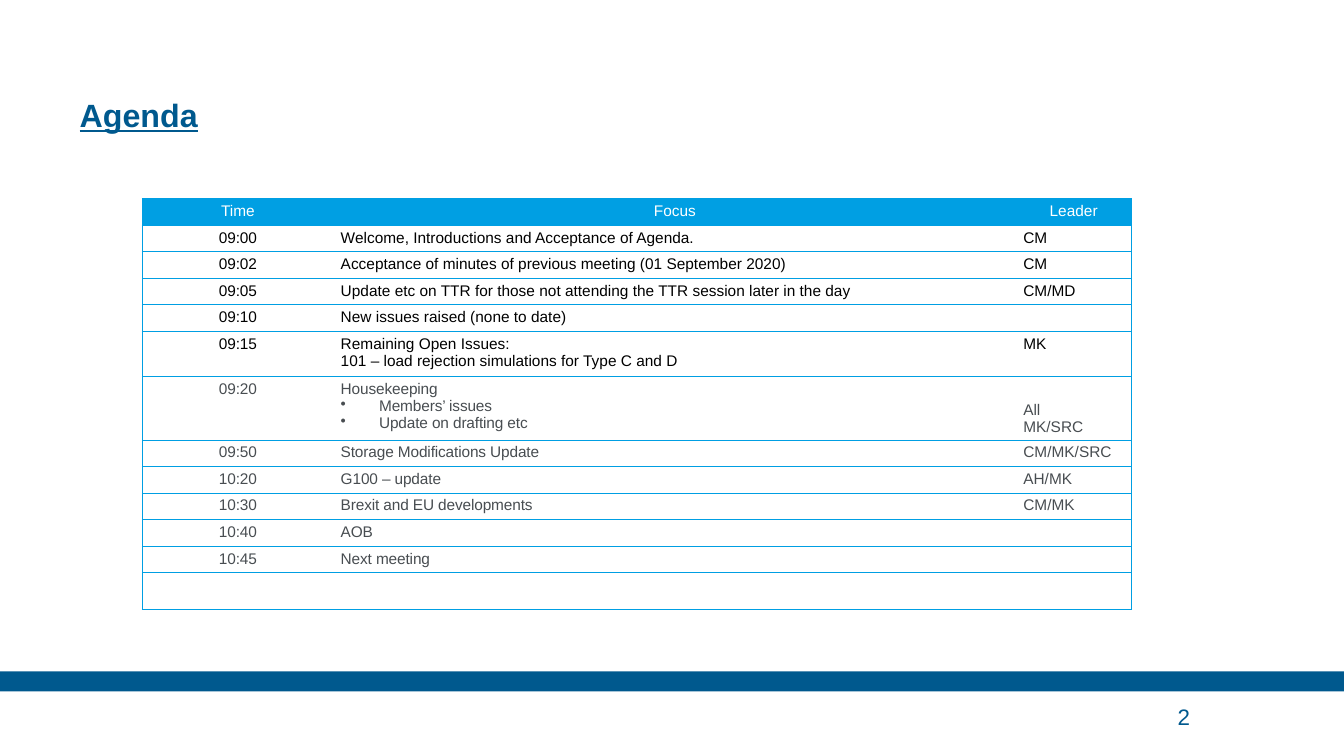
from lxml import etree
from pptx import Presentation
from pptx.dml.color import RGBColor
from pptx.enum.shapes import MSO_SHAPE
from pptx.enum.text import MSO_ANCHOR, PP_ALIGN
from pptx.oxml.ns import qn
from pptx.util import Inches, Pt

LEFT, CENTER = PP_ALIGN.LEFT, PP_ALIGN.CENTER
TOP, MIDDLE, BOTTOM = MSO_ANCHOR.TOP, MSO_ANCHOR.MIDDLE, MSO_ANCHOR.BOTTOM
NAVY, SKY, WHITE, BLACK, GREY = "00598E", "009FE3", "FFFFFF", "000000", "484D51"
FONT = "Arial"
BULLET = "•"

# Content: time, focus lines, leader lines
HEADER = ("Time", ["Focus"], ["Leader"])
MEETING_ITEMS = [
    ("09:00", ["Welcome, Introductions and Acceptance of Agenda."], ["CM"]),
    ("09:02", ["Acceptance of minutes of previous meeting (01 September 2020)"], ["CM"]),
    ("09:05", ["Update etc on TTR for those not attending the TTR session later in the day"],
     ["CM/MD"]),
    ("09:10", ["New issues raised (none to date)"], []),
    ("09:15", ["Remaining Open Issues:", "101 – load rejection simulations for Type C and D"],
     ["MK"]),
]
UPDATE_ITEMS = [
    ("09:20", ["Housekeeping", BULLET + "Members’ issues", BULLET + "Update on drafting etc"],
     ["All", "MK/SRC"]),
    ("09:50", ["Storage Modifications Update"], ["CM/MK/SRC"]),
    ("10:20", ["G100 – update"], ["AH/MK"]),
    ("10:30", ["Brexit and EU developments"], ["CM/MK"]),
    ("10:40", ["AOB"], []),
    ("10:45", ["Next meeting"], []),
    ("", [], []),
]
COLUMN_WIDTHS = [1.9, 6.77, 1.14]
LINE_HEIGHT, ROW_PADDING, LAST_ROW_HEIGHT = 0.17, 0.08, 0.36


def color(hex_code):
    return RGBColor.from_string(hex_code)


def write(frame, lines, size=11, ink=BLACK, align=LEFT, bold=False, underline=False,
          tracking=0, line_spacing=None):
    """Fill a text frame, one paragraph a line; a leading bullet makes a list item."""
    for index, line in enumerate(lines):
        para = frame.paragraphs[0] if index == 0 else frame.add_paragraph()
        para.alignment = align
        if line_spacing:
            para.line_spacing = Pt(line_spacing)
        if line.startswith(BULLET):
            properties = para._p.get_or_add_pPr()
            properties.set("marL", str(Inches(0.38)))
            properties.set("indent", str(-Inches(0.38)))
            etree.SubElement(properties, qn("a:buChar"), char=BULLET)
        span = para.add_run()
        span.text = line.removeprefix(BULLET)
        span.font.name, span.font.size = FONT, Pt(size)
        span.font.bold, span.font.underline = bold, underline
        span.font.color.rgb = color(ink)
        if tracking:
            span._r.get_or_add_rPr().set("spc", str(round(tracking * 100)))
    if not lines:
        # An empty cell keeps the text size, so its row does not grow
        etree.SubElement(frame.paragraphs[0]._p, qn("a:endParaRPr"), sz=str(size * 100))


def add_text(page, place, text, anchor, **style):
    frame = page.shapes.add_textbox(*map(Inches, place)).text_frame
    frame.word_wrap = True
    frame.vertical_anchor = anchor
    frame.margin_left = frame.margin_right = frame.margin_top = frame.margin_bottom = 0
    write(frame, [text], **style)


def set_borders(cell, visible):
    """Draw the named sides of a cell and clear the others."""
    properties = cell._tc.get_or_add_tcPr()
    for index, side in enumerate("LRTB"):
        line = etree.Element(qn(f"a:ln{side}"), w=str(Pt(0.5)))
        if side in visible:
            fill = etree.SubElement(line, qn("a:solidFill"))
            etree.SubElement(fill, qn("a:srgbClr"), val=SKY)
        else:
            etree.SubElement(line, qn("a:noFill"))
        properties.insert(index, line)


def fill_cell(cell, lines, background, sides, anchor, **style):
    cell.margin_left = cell.margin_right = Inches(0.07)
    cell.margin_top = cell.margin_bottom = Inches(0.04)
    cell.vertical_anchor = anchor
    cell.fill.solid()
    cell.fill.fore_color.rgb = color(background)
    set_borders(cell, sides)
    write(cell.text_frame, lines, **style)


def add_agenda(page):
    rows = [(HEADER, WHITE)]
    rows += [(item, BLACK) for item in MEETING_ITEMS]
    rows += [(item, GREY) for item in UPDATE_ITEMS]
    heights = [LINE_HEIGHT * max(1, len(focus)) + ROW_PADDING for (_, focus, _), _ in rows]
    heights[-1] = LAST_ROW_HEIGHT

    table = page.shapes.add_table(
        len(rows), len(COLUMN_WIDTHS), Inches(1.41), Inches(1.97),
        Inches(sum(COLUMN_WIDTHS)), Inches(sum(heights))).table
    table.first_row = table.horz_banding = False
    for column, width in zip(table.columns, COLUMN_WIDTHS):
        column.width = Inches(width)

    for row_index, ((time, focus, leader), ink) in enumerate(rows):
        table.rows[row_index].height = Inches(heights[row_index])
        is_header = row_index == 0
        columns = ([time] if time else [], focus, leader)
        for column_index, (lines, edge) in enumerate(zip(columns, ("L", "", "R"))):
            is_time = column_index == 0
            # Leaders of list items line up with the last lines of the focus
            anchor = BOTTOM if column_index == 2 and len(lines) > 1 else TOP
            tight = not is_header and (is_time or (column_index == 1 and ink == GREY))
            fill_cell(table.cell(row_index, column_index), lines,
                      SKY if is_header else WHITE, "TB" + edge, anchor, ink=ink,
                      align=CENTER if is_header or is_time else LEFT,
                      tracking=-0.1 if tight else 0)


def main():
    deck = Presentation()
    deck.slide_width, deck.slide_height = Inches(13.33), Inches(7.5)
    page = deck.slides.add_slide(deck.slide_layouts[6])

    # Footer band
    band = page.shapes.add_shape(MSO_SHAPE.RECTANGLE, 0, Inches(6.66),
                                 deck.slide_width, Inches(0.2))
    band.shadow.inherit = False
    band.fill.solid()
    band.fill.fore_color.rgb = color(NAVY)
    band.line.fill.background()

    # Title, agenda and page number
    add_text(page, (0.79, 0.31, 9.84, 1.02), "Agenda", BOTTOM, size=23, ink=NAVY,
             bold=True, underline=True, line_spacing=30)
    add_agenda(page)
    add_text(page, (11.68, 6.91, 1.23, 0.39), "2", MIDDLE, size=16, ink=NAVY)

    deck.save("out.pptx")


if __name__ == "__main__":
    main()
